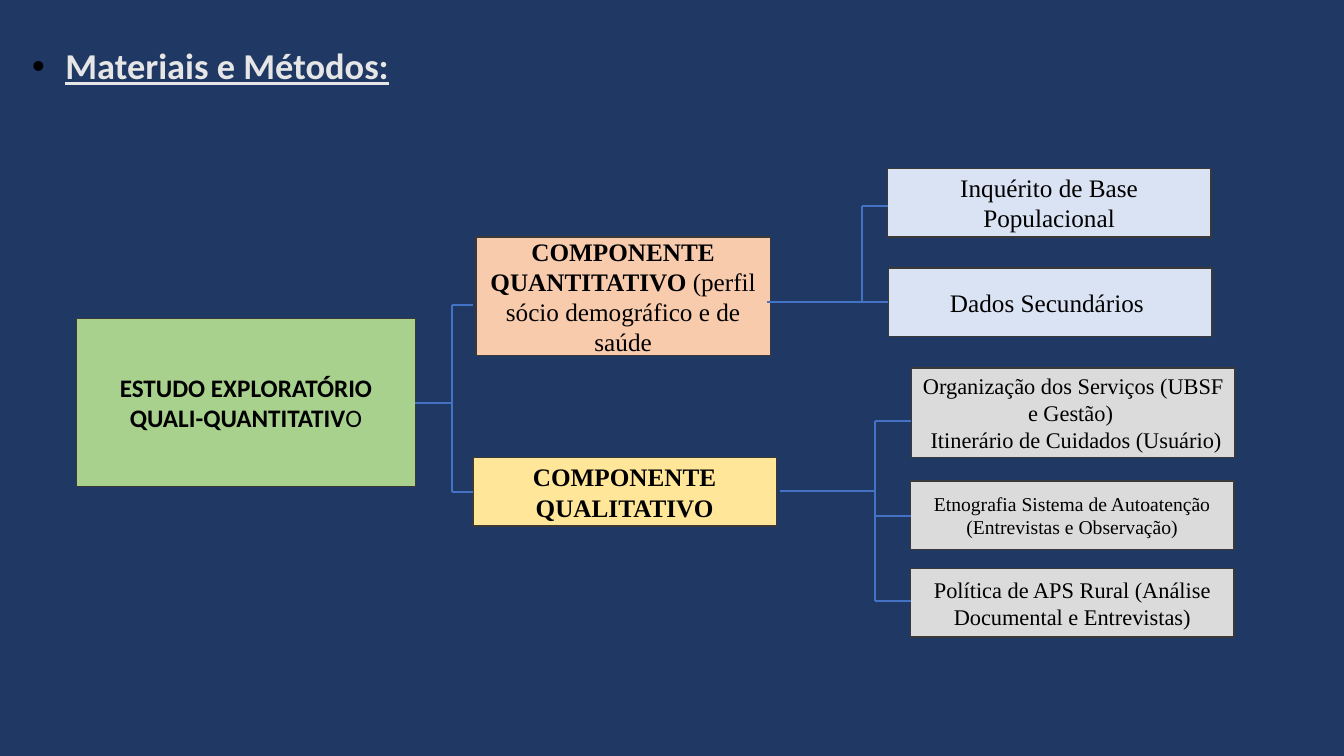
from lxml import etree
from pptx import Presentation
from pptx import util as u
from pptx.dml.color import RGBColor
from pptx.enum import shapes, text
from pptx.oxml import ns

COLORS = {
    "background": "203864", "title": "E7E6E6", "ink": "000000",
    "border": "3B3838", "connector": "4472C4", "study": "A9D18E",
    "quantitative": "F8CBAD", "qualitative": "FFE699",
    "survey": "DAE3F3", "topic": "DBDBDB",
}
SERIF = "Times New Roman"
SANS = "Calibri"


class Diagram:
    def __init__(self, slide):
        self.slide = slide
        background = slide.background.fill
        background.solid()
        background.fore_color.rgb = self.color("background")

    def color(self, name):
        return RGBColor.from_string(COLORS[name])

    def format_run(self, run, font, size, color="ink", bold=False):
        run.font.name = font
        run.font.size = u.Pt(size)
        run.font.bold = bold
        run.font.color.rgb = self.color(color)

    def title(self, wording):
        shape = self.slide.shapes.add_textbox(
            u.Inches(0.22), u.Inches(0.43), u.Inches(11.5), u.Inches(0.5))
        shape.text_frame.word_wrap = True
        paragraph = shape.text_frame.paragraphs[0]
        paragraph.text = wording
        paragraph.line_spacing = 0.9
        run = paragraph.runs[0]
        self.format_run(run, SANS, 26, "title", True)
        run.font.underline = True
        properties = paragraph._p.get_or_add_pPr()
        properties.set("marL", str(u.Inches(0.33)))
        properties.set("indent", str(-u.Inches(0.33)))
        bullet_color = etree.SubElement(properties, ns.qn("a:buClr"))
        etree.SubElement(bullet_color, ns.qn("a:srgbClr"), val=COLORS["ink"])
        etree.SubElement(properties, ns.qn("a:buFont"), typeface="Arial")
        etree.SubElement(properties, ns.qn("a:buChar"), char="•")

    def box(self, left, top, width, height, fill, paragraphs, size=18, font=SERIF):
        shape = self.slide.shapes.add_shape(
            shapes.MSO_SHAPE.RECTANGLE,
            *(u.Inches(length) for length in (left, top, width, height)))
        shape.shadow.inherit = False
        shape.fill.solid()
        shape.fill.fore_color.rgb = self.color(fill)
        shape.line.color.rgb = self.color("border")
        shape.line.width = u.Pt(1)
        frame = shape.text_frame
        frame.word_wrap = True
        frame.vertical_anchor = text.MSO_ANCHOR.MIDDLE
        for index, pieces in enumerate(paragraphs):
            paragraph = frame.add_paragraph() if index else frame.paragraphs[0]
            paragraph.alignment = text.PP_ALIGN.CENTER
            for wording, bold in pieces:
                run = paragraph.add_run()
                run.text = wording
                self.format_run(run, font, size, bold=bold)

    def line(self, start_x, start_y, end_x, end_y):
        connector = self.slide.shapes.add_connector(
            shapes.MSO_CONNECTOR.STRAIGHT,
            *(u.Inches(length) for length in (start_x, start_y, end_x, end_y)))
        connector.line.color.rgb = self.color("connector")
        connector.line.width = u.Pt(1.5)
        etree.SubElement(connector._element.spPr, ns.qn("a:effectLst"))

    def bracket(self, start_x, start_y, trunk_x, end_x, branches):
        self.line(start_x, start_y, trunk_x, start_y)
        self.line(trunk_x, min(branches), trunk_x, max(branches))
        for branch_y in branches:
            self.line(trunk_x, branch_y, end_x, branch_y)


def main():
    presentation = Presentation()
    presentation.slide_width = u.Inches(13.33)
    presentation.slide_height = u.Inches(7.5)
    diagram = Diagram(presentation.slides.add_slide(presentation.slide_layouts[6]))

    diagram.title("Materiais e Métodos:")
    diagram.box(0.76, 3.16, 3.36, 1.67, "study",
                [[("ESTUDO EXPLORATÓRIO QUALI-QUANTITATIV", True), ("O", False)]],
                font=SANS)
    diagram.box(4.72, 2.35, 2.92, 1.18, "quantitative",
                [[("COMPONENTE QUANTITATIVO ", True),
                  ("(perfil sócio demográfico e de saúde", False)]])
    diagram.box(4.69, 4.54, 3.01, 0.68, "qualitative",
                [[("COMPONENTE QUALITATIVO", True)]])

    leaves = [
        (8.8, 1.67, 0.68, "survey", 18, ["Inquérito de Base Populacional"]),
        (8.81, 2.66, 0.68, "survey", 18, ["Dados Secundários "]),
        (9.04, 3.65, 0.89, "topic", 16,
         ["Organização dos Serviços (UBSF e Gestão) ",
          " Itinerário de Cuidados (Usuário)"]),
        (9.03, 4.77, 0.68, "topic", 14,
         ["Etnografia Sistema de Autoatenção (Entrevistas e Observação)"]),
        (9.03, 5.64, 0.68, "topic", 16,
         ["Política de APS Rural (Análise Documental e Entrevistas)"]),
    ]
    for left, top, height, fill, size, wordings in leaves:
        diagram.box(left, top, 3.21, height, fill,
                    [[(wording, False)] for wording in wordings], size)

    diagram.bracket(4.12, 4, 4.48, 4.69, [3.03, 4.88])
    diagram.bracket(7.61, 3, 8.55, 8.81, [2.04, 3])
    diagram.bracket(7.74, 4.87, 8.68, 9.04, [4.18, 5.12, 5.96])
    presentation.save("out.pptx")


if __name__ == "__main__":
    main()
